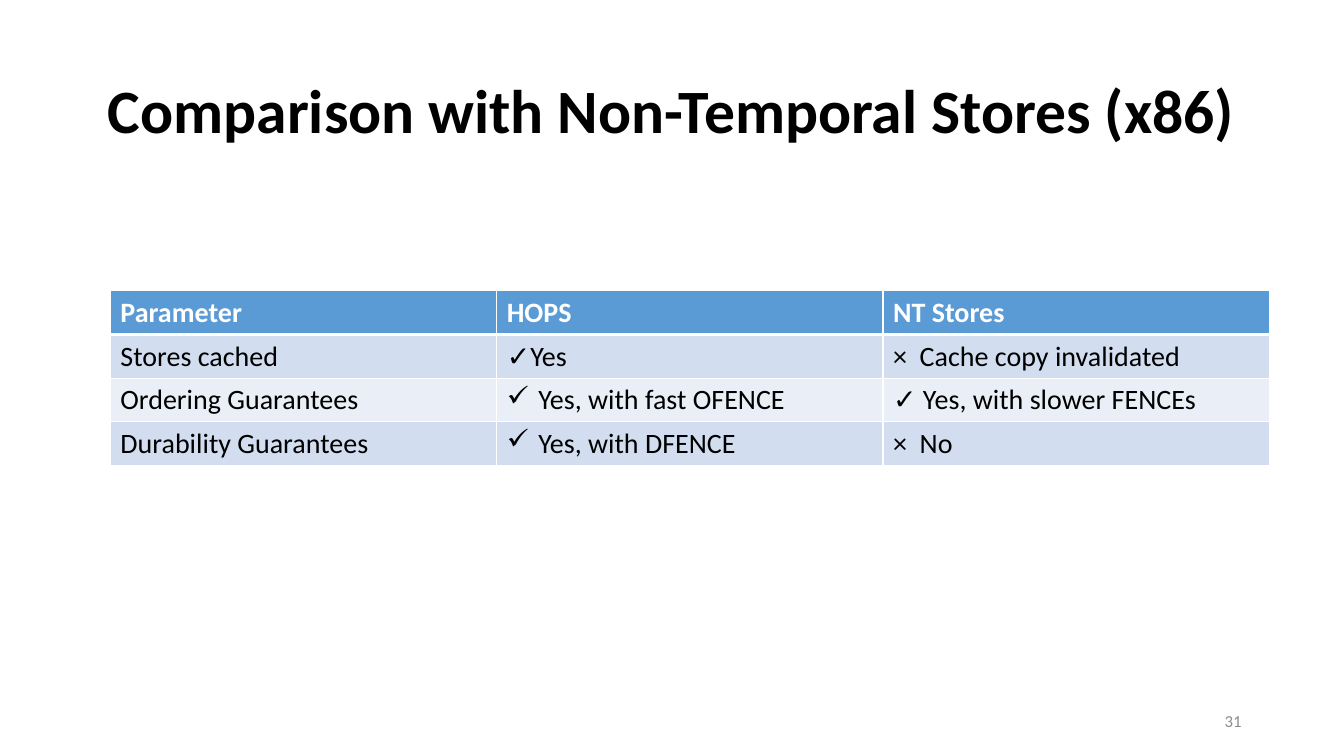
from lxml.etree import SubElement
from pptx import Presentation
from pptx.dml.color import RGBColor
from pptx.enum.text import MSO_ANCHOR, PP_ALIGN
from pptx.oxml.ns import qn
from pptx.util import Pt

FONT = "Calibri"
HEX = {"ink": "000000", "white": "FFFFFF", "gray": "8C8C8C",
       "head": "5B9BD5", "odd": "D2DEEF", "even": "EAEFF7"}
TICK = "✓"
DENT = 22.5

# Each cell: text, and whether it takes a tick bullet
ROWS = [
    [("Parameter", False), ("HOPS", False), ("NT Stores", False)],
    [("Stores cached", False), ("✓Yes", False),
     ("×  Cache copy invalidated", False)],
    [("Ordering Guarantees", False), ("Yes, with fast OFENCE", True),
     ("✓ Yes, with slower FENCEs", False)],
    [("Durability Guarantees", False), ("Yes, with DFENCE", True),
     ("×  No", False)],
]


def color(name):
    return RGBColor.from_string(HEX[name])


def add_run(para, text, size, tone, bold=False):
    run = para.add_run()
    run.text = text
    font = run.font
    font.name, font.size, font.bold = FONT, Pt(size), bold
    font.color.rgb = color(tone)


def add_label(slide, box, text, size, tone, align, bold=False):
    frame = slide.shapes.add_textbox(*map(Pt, box)).text_frame
    frame.word_wrap = True
    frame.vertical_anchor = MSO_ANCHOR.MIDDLE
    para = frame.paragraphs[0]
    para.alignment = align
    add_run(para, text, size, tone, bold)
    return para


def add_title(slide, box):
    para = add_label(slide, box, "Comparison with Non-Temporal Stores (x86)",
                     44, "ink", PP_ALIGN.CENTER, True)
    para.line_spacing = 0.9


def add_tick(para):
    props = para._p.get_or_add_pPr()
    props.set("marL", str(Pt(DENT)))
    props.set("indent", str(-Pt(DENT)))
    SubElement(props, qn("a:buChar"), char=TICK)


def set_edges(cell, base):
    props = cell._tc.get_or_add_tcPr()
    # Borders come before the fill in the cell properties
    for i, (side, width) in enumerate(base.items()):
        line = SubElement(props, qn("a:" + side), w=str(Pt(width)))
        fill = SubElement(line, qn("a:solidFill"))
        SubElement(fill, qn("a:srgbClr"), val=HEX["white"])
        props.insert(i, line)


def add_grid(slide, box):
    left, top, width, height = box
    count = len(ROWS[0])
    table = slide.shapes.add_table(len(ROWS), count, *map(Pt, box)).table
    for col in table.columns:
        col.width = Pt(width / count)
    for row in table.rows:
        row.height = Pt(height / len(ROWS))
    for r, row in enumerate(ROWS):
        head = r == 0
        band = "head" if head else "odd" if r % 2 else "even"
        edges = {"lnL": 1, "lnR": 1, "lnT": 3 if r == 1 else 1,
                 "lnB": 3 if head else 1}
        for c, (text, tick) in enumerate(row):
            cell = table.cell(r, c)
            cell.fill.solid()
            cell.fill.fore_color.rgb = color(band)
            set_edges(cell, edges)
            para = cell.text_frame.paragraphs[0]
            if tick:
                add_tick(para)
            add_run(para, text, 20, "white" if head else "ink", head)


def main():
    deck = Presentation()
    deck.slide_width, deck.slide_height = Pt(960), Pt(540)
    slide = deck.slides.add_slide(deck.slide_layouts[6])
    # Title
    add_title(slide, (66, 28.8, 828, 104.4))
    # Comparison table
    add_grid(slide, (78.8, 207.6, 828, 124.8))
    # Slide number
    add_label(slide, (678, 500.5, 216, 28.8), "31", 12, "gray",
              PP_ALIGN.RIGHT)
    deck.save("out.pptx")


if __name__ == "__main__":
    main()
